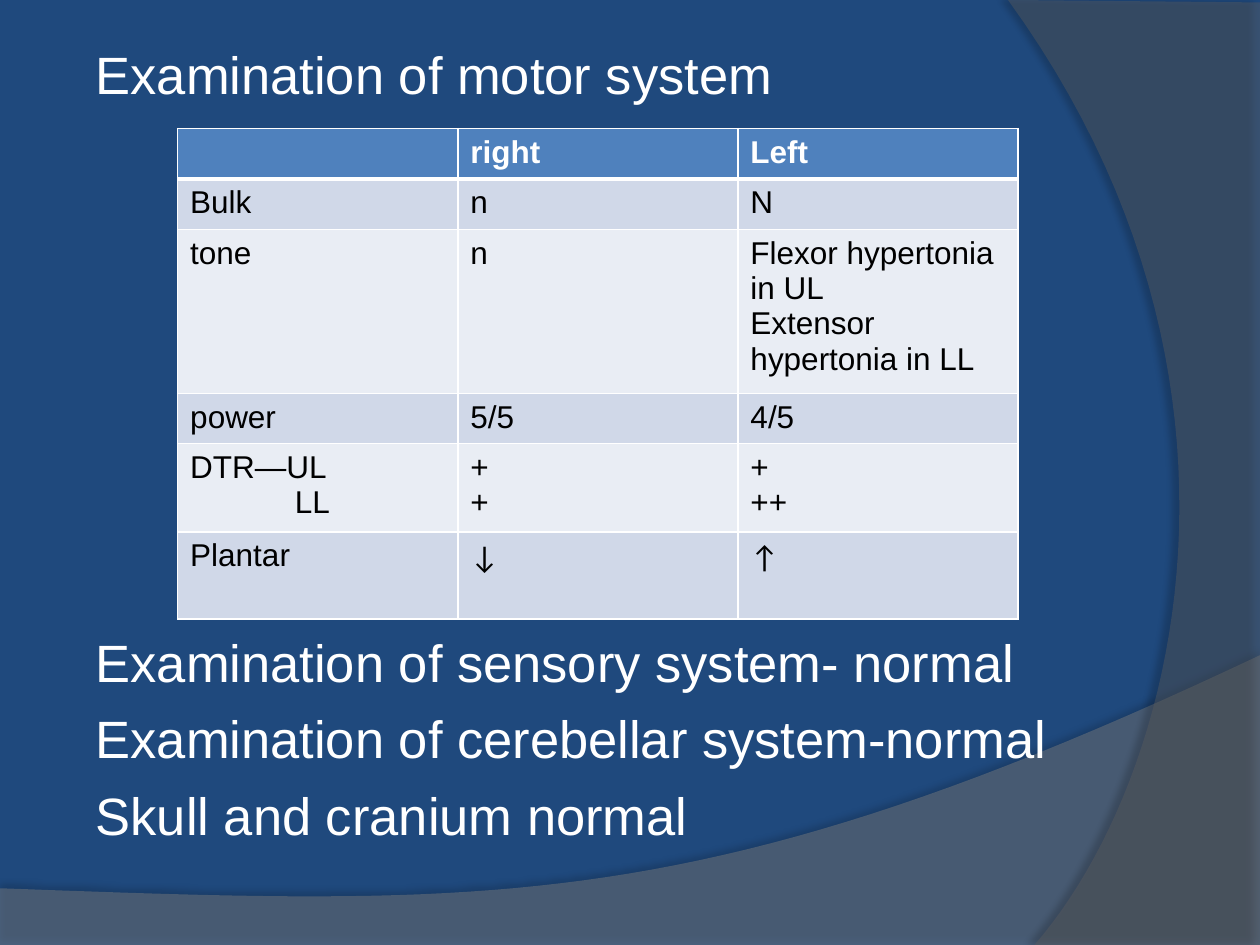
from lxml.etree import SubElement
from pptx import Presentation
from pptx.dml.color import RGBColor
from pptx.enum.text import MSO_ANCHOR
from pptx.oxml.ns import qn
from pptx.util import Inches, Pt

WIDTH, HEIGHT = Inches(10), Inches(7.5)
NAVY = RGBColor(0x1F, 0x49, 0x7D)
GREY = RGBColor(0x7F, 0x7F, 0x7F)
DARK_GREY = RGBColor(0x5E, 0x5E, 0x5E)
HEADER_BLUE = RGBColor(0x4F, 0x81, 0xBD)
BAND_DARK = RGBColor(0xD0, 0xD8, 0xE8)
BAND_LIGHT = RGBColor(0xE9, 0xED, 0xF4)
WHITE = RGBColor(0xFF, 0xFF, 0xFF)
BLACK = RGBColor(0, 0, 0)

ROW_HEIGHTS = [0.38, 0.38, 1.22, 0.38, 0.66, 0.69]
FINDINGS = [
    ["", "right", "Left"],
    ["Bulk", "n", "N"],
    ["tone", "n", "Flexor hypertonia in UL\nExtensor hypertonia in LL"],
    ["power", "5/5", "4/5"],
    ["DTR—UL\nLL", "+\n+", "+\n++"],
    ["Plantar", "↓", "↑"],
]


def curve(start, first, second, end, steps=48):
    """Return points along a cubic Bezier curve, without its start."""
    points = []
    for step in range(1, steps + 1):
        t = step / steps
        weights = ((1 - t) ** 3, 3 * t * (1 - t) ** 2, 3 * t * t * (1 - t), t ** 3)
        points.append(tuple(
            sum(w * value for w, value in zip(weights, values))
            for values in zip(start, first, second, end)
        ))
    return points


def add_color(parent, color, opacity):
    """Add a colour with an opacity in percent below an XML element."""
    node = SubElement(parent, qn("a:srgbClr"), val=str(color))
    SubElement(node, qn("a:alpha"), val=str(opacity * 1000))


def add_wave(page, points, color, opacity, shadow_opacity, distance, angle):
    """Draw a translucent shadowed outline from points in inches."""
    corners = [(Inches(x), Inches(y)) for x, y in points]
    builder = page.shapes.build_freeform(*corners[0])
    builder.add_line_segments(corners[1:], close=True)
    wave = builder.convert_to_shape()
    wave.fill.solid()
    wave.fill.fore_color.rgb = color
    wave.line.fill.background()
    wave.shadow.inherit = False
    properties = wave.element.spPr
    shade = properties.find(qn("a:solidFill")).find(qn("a:srgbClr"))
    SubElement(shade, qn("a:alpha"), val=str(opacity * 1000))
    shadow = SubElement(
        properties.find(qn("a:effectLst")), qn("a:outerShdw"),
        blurRad=str(Pt(4)), dist=str(Pt(distance)), dir=str(angle * 60000),
        algn="ctr", rotWithShape="0",
    )
    add_color(shadow, BLACK, shadow_opacity)


def write_text(frame, text, size=18, color=BLACK, bold=False, font="Arial", gap=0):
    """Fill a text frame with one formatted paragraph per line of text."""
    for index, line in enumerate(text.split("\n")):
        para = frame.add_paragraph() if index else frame.paragraphs[0]
        para.space_after = Pt(gap)
        span = para.add_run()
        span.text = line
        span.font.size = Pt(size)
        span.font.name = font
        span.font.bold = bold
        span.font.color.rgb = color


def add_lines(page, text, top, height):
    """Add large white lines of text at the left margin."""
    box = page.shapes.add_textbox(
        int(WIDTH * 0.076), int(HEIGHT * top), int(WIDTH * 0.8), int(HEIGHT * height)
    )
    frame = box.text_frame
    frame.word_wrap = True
    frame.vertical_anchor = MSO_ANCHOR.TOP
    frame.margin_left = frame.margin_right = 0
    frame.margin_top = frame.margin_bottom = 0
    write_text(frame, text, size=30, color=WHITE, gap=7.5)


def set_borders(cell, top, bottom):
    """Give a cell white borders, with top and bottom widths in points."""
    properties = cell._tc.get_or_add_tcPr()
    for side, width in (("L", 1), ("R", 1), ("T", top), ("B", bottom)):
        line = SubElement(properties, qn(f"a:ln{side}"), w=str(Pt(width)))
        fill = SubElement(line, qn("a:solidFill"))
        SubElement(fill, qn("a:srgbClr"), val=str(WHITE))


def add_findings(page):
    """Add the banded table of motor findings."""
    table = page.shapes.add_table(
        len(FINDINGS), 3, int(WIDTH * 0.141), int(HEIGHT * 0.136),
        int(WIDTH * 0.667), Inches(sum(ROW_HEIGHTS)),
    ).table
    for row, (height, texts) in enumerate(zip(ROW_HEIGHTS, FINDINGS)):
        table.rows[row].height = Inches(height)
        header = row == 0
        band = HEADER_BLUE if header else (BAND_LIGHT, BAND_DARK)[row % 2]
        for column, text in enumerate(texts):
            cell = table.cell(row, column)
            set_borders(cell, top=3 if row == 1 else 1, bottom=3 if header else 1)
            cell.fill.solid()
            cell.fill.fore_color.rgb = band
            if text:
                write_text(
                    cell.text_frame, text, bold=header,
                    color=WHITE if header else BLACK,
                    font="Calibri" if text in "↓↑" else "Arial",
                )
    limb = table.cell(4, 0).text_frame.paragraphs[1]
    limb._p.get_or_add_pPr().set("marL", str(Inches(0.83)))


def main():
    """Build the examination slide and save it."""
    deck = Presentation()
    deck.slide_width, deck.slide_height = WIDTH, HEIGHT
    page = deck.slides.add_slide(deck.slide_layouts[6])
    page.background.fill.solid()
    page.background.fill.fore_color.rgb = NAVY

    lower = [(0, 7.05), (0, 7.51), (10, 7.51), (10, 5.2)]
    lower += curve((10, 5.2), (5.59, 7.29), (3.91, 7.19), (0, 7.05))
    add_wave(page, lower, GREY, 45, shadow_opacity=35, distance=3.5, angle=270)
    right = [(10, 0.02), (10, 7.5), (8.21, 7.5)]
    right += curve((8.21, 7.5), (9.35, 6.19), (10.18, 3), (8, 0))
    add_wave(page, right, DARK_GREY, 40, shadow_opacity=45, distance=4, angle=180)

    add_lines(page, "Examination of motor system", top=0.045, height=0.07)
    add_findings(page)
    add_lines(
        page,
        "Examination of sensory system- normal\n"
        "Examination of cerebellar system-normal\n"
        "Skull and cranium normal",
        top=0.667, height=0.23,
    )
    deck.save("out.pptx")


if __name__ == "__main__":
    main()
